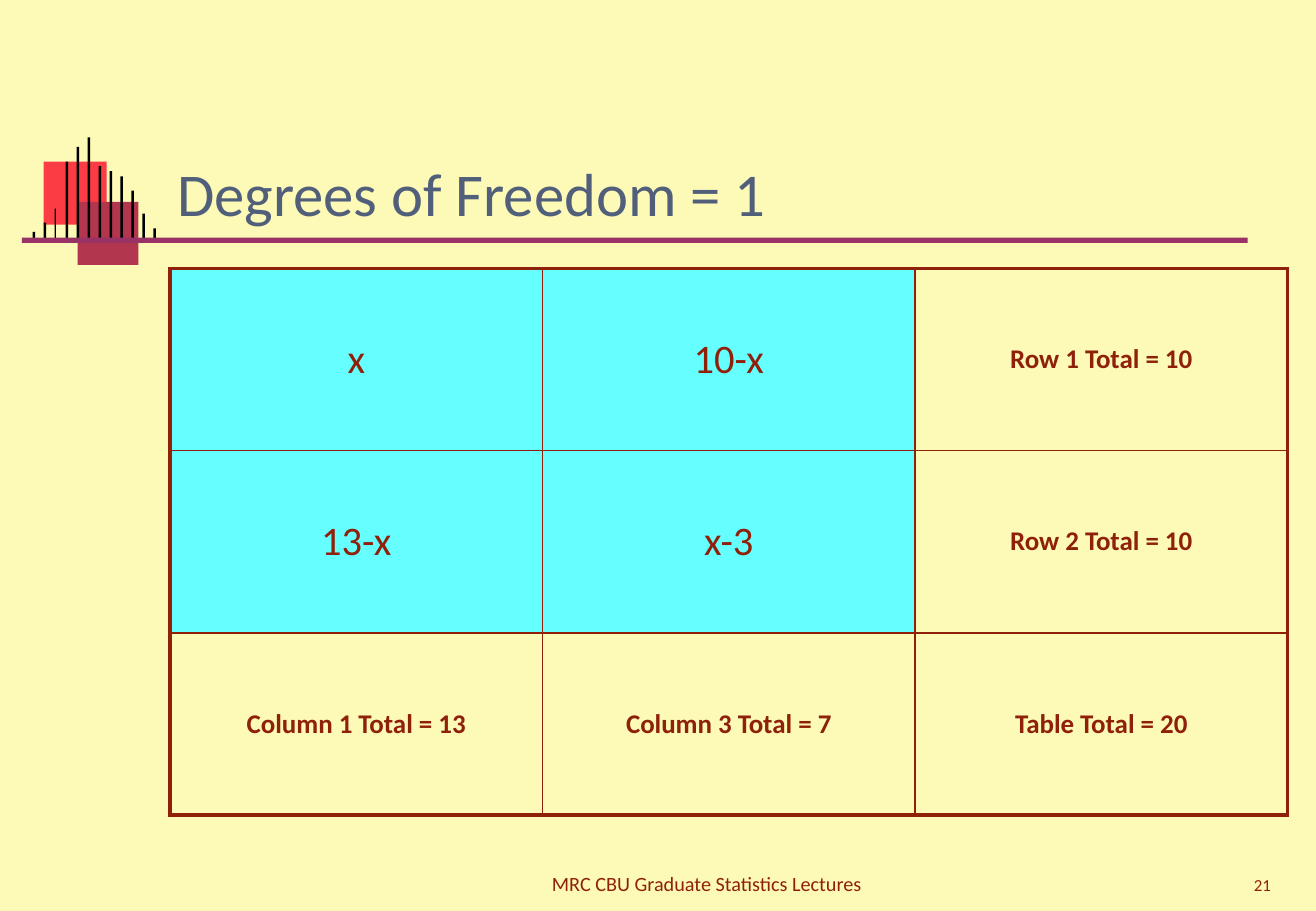
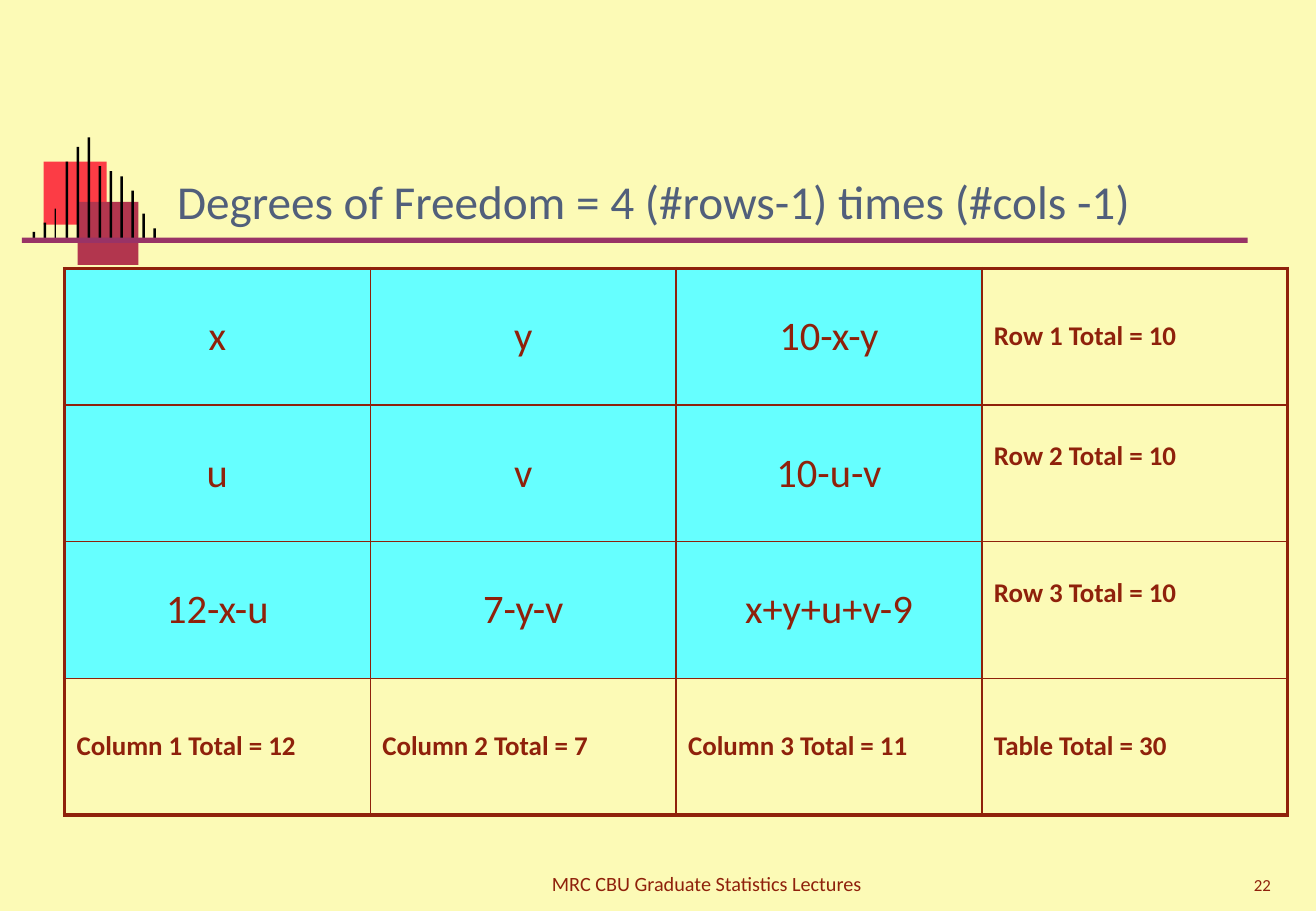
from lxml import etree
from pptx import Presentation
from pptx.dml.color import RGBColor
from pptx.enum.shapes import MSO_SHAPE as SHAPE
from pptx.enum.text import MSO_ANCHOR as ANCHOR, PP_ALIGN as ALIGN
from pptx.oxml.ns import qn
from pptx.util import Pt

FONT = "Calibri"
COLORS = {
    "paper": "FCFAB6",
    "ink": "8F210B",
    "title": "515F7B",
    "free": "66FFFF",
    "red": "FC3C45",
    "wine": "B2364E",
    "bar": "000000",
    "rule": "993366",
}

# Boxes: left, top, width, height in points
EMBLEM = (19.4, 81.5, 73, 75.5)
RULE = (13, 140.8, 726.5, 3.2)
TITLE = (97.9, 49, 664.6, 90)
FOOTER = (227.5, 498.2, 383, 36)
NUMBER = (617, 498.2, 143.3, 36)
TABLE_RIGHT, TABLE_TOP, TABLE_HEIGHT = 763.2, 159.1, 324

BAR_HEIGHTS = (6.5, 12, 20.3, 48.2, 57, 62.5, 45.5, 42.5, 39.5, 31, 17.3, 8.6)
BAR_STEP = 6.5
THIN_BAR = 2
OUTER, INNER = 2.25, 1


def rgb(name):
    return RGBColor.from_string(COLORS[name])


def add_run(p, text, size, color, bold=False):
    r = p.add_run()
    r.text = text
    r.font.name, r.font.size, r.font.bold = FONT, Pt(size), bold
    r.font.color.rgb = rgb(color)


def add_rect(shapes, box, color):
    sp = shapes.add_shape(SHAPE.RECTANGLE, *map(Pt, box))
    sp.shadow.inherit = False
    sp.fill.solid()
    sp.fill.fore_color.rgb = rgb(color)
    sp.line.fill.background()


def add_text(s, box, text, size, color, align):
    tf = s.shapes.add_textbox(*map(Pt, box)).text_frame
    tf.word_wrap = True
    tf.vertical_anchor = ANCHOR.BOTTOM
    p = tf.paragraphs[0]
    p.alignment = align
    add_run(p, text, size, color)


def add_emblem(s, box):
    """Two squares behind a row of bars that stand on the rule."""
    left, top, width, height = box
    shapes = s.shapes.add_group_shape().shapes
    add_rect(shapes, (left + 6.5, top + 14.3, 37.4, 37.4), "red")
    add_rect(shapes, (left + 26.7, top + height - 37.4, 36, 37.4), "wine")
    base = top + BAR_HEIGHTS[5]
    for i, bar in enumerate(BAR_HEIGHTS):
        thickness = 0.75 if i == THIN_BAR else 1.5
        add_rect(shapes, (left + i * BAR_STEP, base - bar, thickness, bar), "bar")


def set_borders(cell, widths):
    tcPr = cell._tc.get_or_add_tcPr()
    for side, width in zip("LRTB", widths):
        ln = etree.SubElement(tcPr, qn("a:ln" + side), w=str(Pt(width)))
        fill = etree.SubElement(ln, qn("a:solidFill"))
        etree.SubElement(fill, qn("a:srgbClr"), val=COLORS["ink"])


def add_totals_table(s, box, rows, total_align, raised_rows):
    """Free cells are filled; the last row and column hold the totals."""
    n = len(rows)
    left, top, width, height = box
    table = s.shapes.add_table(n, n, *map(Pt, box)).table
    table.first_row = table.horz_banding = False
    last = n - 1
    for i, row in enumerate(rows):
        table.rows[i].height = Pt(height / n)
        table.columns[i].width = Pt(width / n)
        for j, text in enumerate(row):
            cell = table.cell(i, j)
            edges = (j == 0, j == last, i == 0, i == last)
            set_borders(cell, [OUTER if edge else INNER for edge in edges])
            is_total = last in (i, j)
            if is_total:
                cell.fill.background()
            else:
                cell.fill.solid()
                cell.fill.fore_color.rgb = rgb("free")
            cell.vertical_anchor = ANCHOR.MIDDLE
            if j == last and i in raised_rows:
                cell.margin_bottom = Pt(23.6)
            p = cell.text_frame.paragraphs[0]
            p.alignment = total_align if is_total else ALIGN.CENTER
            add_run(p, text, 16 if is_total else 24, "ink", is_total)


def add_slide(prs, number, title, title_size, table_left, rows, total_align, raised_rows=()):
    s = prs.slides.add_slide(prs.slide_layouts[6])
    s.background.fill.solid()
    s.background.fill.fore_color.rgb = rgb("paper")
    # Shared frame
    add_emblem(s, EMBLEM)
    add_rect(s.shapes, RULE, "rule")
    add_text(s, FOOTER, "MRC CBU Graduate Statistics Lectures", 12, "ink", ALIGN.CENTER)
    add_text(s, NUMBER, str(number), 10, "ink", ALIGN.RIGHT)
    # Title and table
    add_text(s, TITLE, title, title_size, "title", ALIGN.LEFT)
    box = (table_left, TABLE_TOP, TABLE_RIGHT - table_left, TABLE_HEIGHT)
    add_totals_table(s, box, rows, total_align, raised_rows)


def main():
    prs = Presentation()
    prs.slide_width, prs.slide_height = Pt(780), Pt(540)
    add_slide(prs, 21, "Degrees of Freedom = 1", 36, 100.8, [
        ("x", "10-x", "Row 1 Total = 10"),
        ("13-x", "x-3", "Row 2 Total = 10"),
        ("Column 1 Total = 13", "Column 3 Total = 7", "Table Total = 20"),
    ], ALIGN.CENTER)
    add_slide(prs, 22, "Degrees of Freedom = 4 (#rows-1) times (#cols -1)", 28, 38.2, [
        ("x", "y", "10-x-y", "Row 1 Total = 10"),
        ("u", "v", "10-u-v", "Row 2 Total = 10"),
        ("12-x-u", "7-y-v", "x+y+u+v-9", "Row 3 Total = 10"),
        ("Column 1 Total = 12", "Column 2 Total = 7", "Column 3 Total = 11",
         "Table Total = 30"),
    ], ALIGN.LEFT, raised_rows=(1, 2))
    prs.save("out.pptx")


if __name__ == "__main__":
    main()
